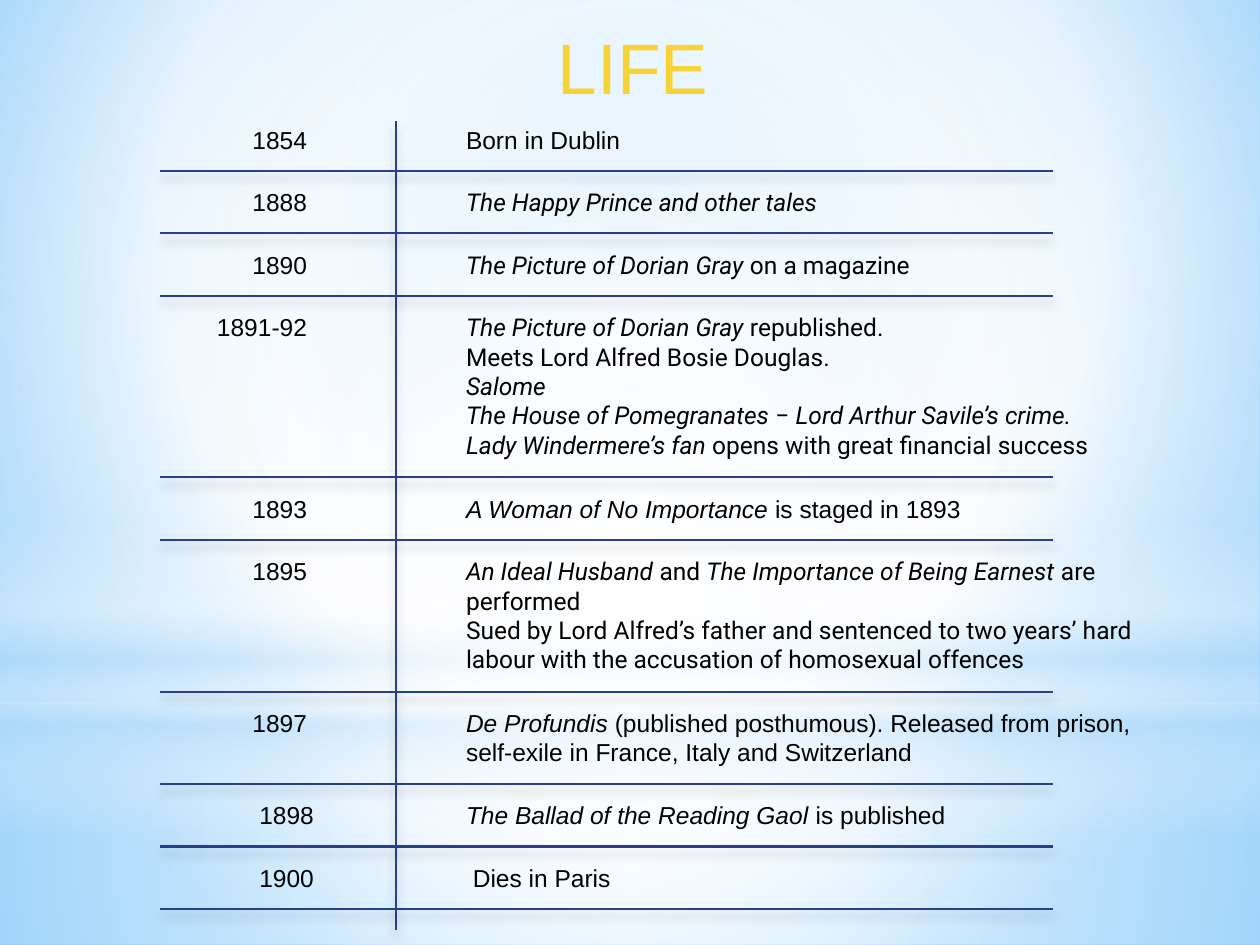
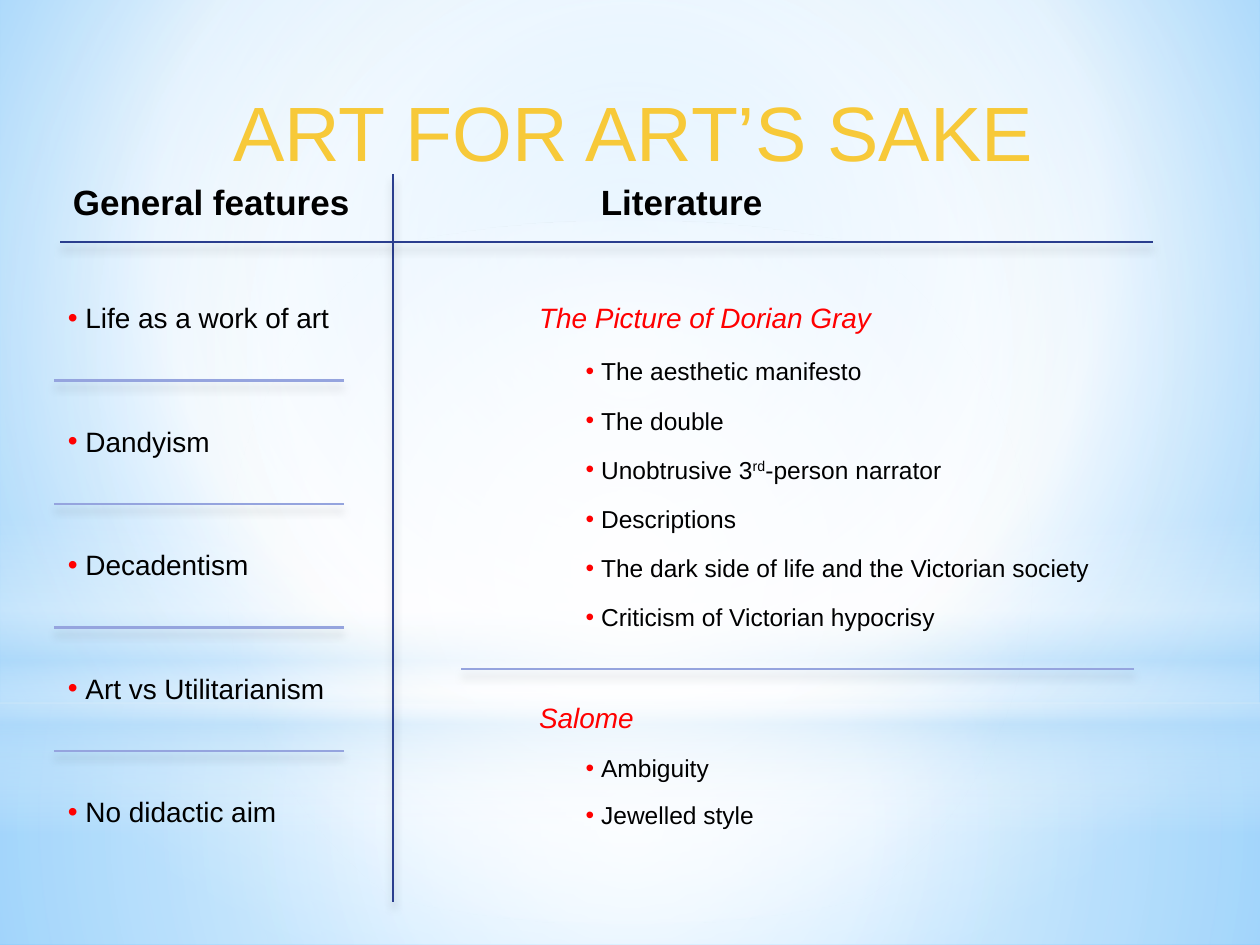
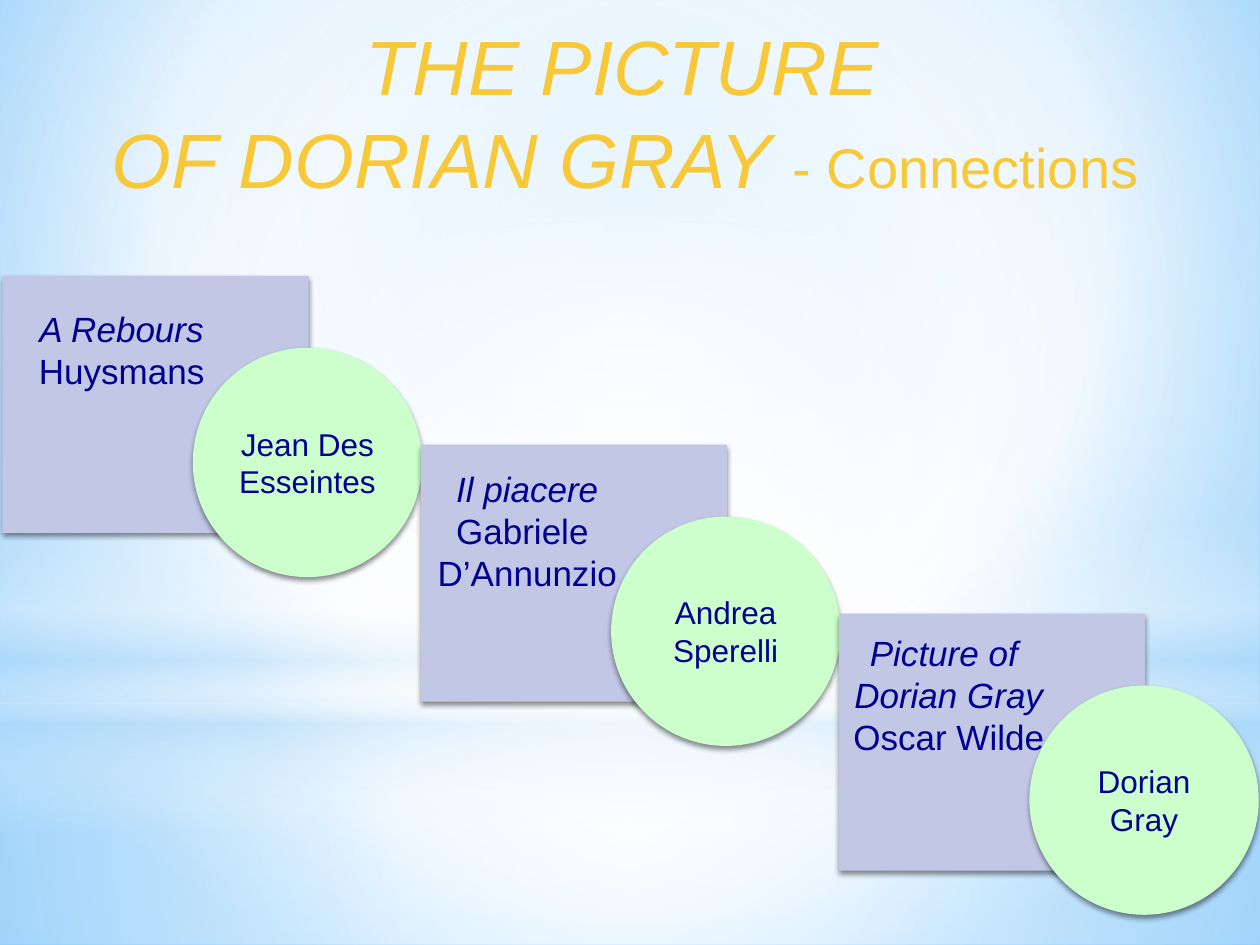
from lxml import etree
from pptx import Presentation
from pptx.dml.color import RGBColor
from pptx.enum.shapes import MSO_CONNECTOR, MSO_SHAPE
from pptx.enum.text import MSO_ANCHOR, PP_ALIGN
from pptx.oxml import parse_xml
from pptx.oxml.ns import nsdecls, qn
from pptx.util import Inches, Pt

# Shared look
GOLD = RGBColor(0xF7, 0xC9, 0x39)
LIFE_GOLD = RGBColor(0xF7, 0xD3, 0x36)
BLACK = RGBColor(0x00, 0x00, 0x00)
RED = RGBColor(0xFF, 0x00, 0x00)
NAVY = RGBColor(0x00, 0x00, 0x90)
RULE_BLUE = RGBColor(0x2A, 0x3E, 0x8E)
PALE_RULE = RGBColor(0x95, 0xA4, 0xDE)
CARD_FILL = RGBColor(0xC2, 0xC7, 0xE6)
CIRCLE_FILL = RGBColor(0xCC, 0xFF, 0xCC)
SANS, ROBOTO = "Arial", "Roboto"
WIDTH, HEIGHT = 10, 7.5
CENTRE = (50, 50, 50, 50)

# Gradient stops: position, colour, opacity (all percent)
SKY = [(0, "9ED5FF", 100), (60, "FFFFFF", 100), (100, "5BB9FF", 100)]
SKY_FOCUS = (20, 10, 20, 60)
HAZE = [  # preset, box, stops, focus (None means a vertical sweep)
    (MSO_SHAPE.RECTANGLE, (0, 5.58, WIDTH, 1.92),
     [(0, "FFFFFF", 91), (37, "FFFFFF", 76), (100, "B4DCFA", 79)], CENTRE),
    (MSO_SHAPE.RECTANGLE, (0, 0, WIDTH, 5.58),
     [(0, "FFFFFF", 89), (48, "FFFFFF", 62), (100, "B4DCFA", 79)], CENTRE),
    (MSO_SHAPE.RECTANGLE, (0, 4.12, WIDTH, 2.5),
     [(0, "FFFFFF", 0), (29, "FFFFFF", 30), (45, "B4DCFA", 40),
      (55, "FFFFFF", 26), (65, "B4DCFA", 60), (100, "FFFFFF", 0)], None),
    (MSO_SHAPE.OVAL, (0, 1.75, WIDTH, 5.58),
     [(0, "FFFFFF", 100), (56, "FFFFFF", 0)], CENTRE),
]

# Content: *...* is italic, ^...^ is superscript
LIFE = [  # year, font, lines taken, paragraphs
    ("1854 ", SANS, 1, ["Born in Dublin"]),
    ("1888 ", ROBOTO, 1, ["*The Happy Prince and other tales*"]),
    ("1890 ", ROBOTO, 1, ["*The Picture of Dorian Gray* on a magazine"]),
    ("1891-92 ", ROBOTO, 5, [
        "*The Picture of Dorian Gray* republished.",
        "Meets Lord Alfred Bosie Douglas.",
        "*Salome*",
        "*The House of Pomegranates* − *Lord Arthur Savile’s crime.*",
        "*Lady Windermere’s fan* opens with great financial success"]),
    ("1893 ", SANS, 1, ["*A Woman of No Importance *is staged in 1893"]),
    ("1895 ", ROBOTO, 4, [
        "*An Ideal Husband* and *The Importance of Being Earnest* are performed",
        "Sued by Lord Alfred’s father and sentenced to two years’ hard labour "
        "with the accusation of homosexual offences"]),
    ("1897 ", SANS, 2, [
        "*De Profundis* (published posthumous). Released from prison, "
        "self-exile in France, Italy and Switzerland"]),
    ("1898", SANS, 1, ["*The Ballad of the Reading Gaol* is published"]),
    ("1900", SANS, 1, [" Dies in Paris"]),
]
FEATURES = ["Life as a work of art", "Dandyism", "Decadentism",
            "Art vs Utilitarianism", "No didactic aim"]
WORKS = [  # title, its top, top of first point, pitch, points
    ("*The Picture of Dorian Gray*", 2.34, 2.78, 0.39, [
        "The aesthetic manifesto", "The double",
        "Unobtrusive 3^rd^-person narrator", "Descriptions",
        "The dark side of life and the Victorian society",
        "Criticism of Victorian hypocrisy"]),
    ("*Salome*", 5.51, 5.93, 0.37, ["Ambiguity", "Jewelled style"]),
]
CONNECTIONS = [  # book lines, text box inside the card, hero lines
    (["*A Rebours*", "Huysmans"], (0.15, 0.2, 1.59, 0.77),
     ["Jean Des", "Esseintes"]),
    (["*Il piacere*", "Gabriele ", "D’Annunzio"], (0.02, 0.13, 1.65, 1.11),
     ["Andrea", "Sperelli"]),
    (["*Picture of *", "*Dorian Gray*", "Oscar Wilde"], (-0.02, 0.09, 1.78, 1.11),
     ["Dorian", "Gray"]),
]


def inches(*lengths):
    return [Inches(length) for length in lengths]


# Fills and shadows
def set_gradient(element, stops, focus):
    """Replace the first solid fill in the element with a gradient."""
    gradient = parse_xml(f'<a:gradFill {nsdecls("a")} rotWithShape="1"><a:gsLst/></a:gradFill>')
    for position, colour, opacity in stops:
        stop = etree.SubElement(gradient[0], qn("a:gs"), pos=str(position * 1000))
        tint = etree.SubElement(stop, qn("a:srgbClr"), val=colour)
        if opacity < 100:
            etree.SubElement(tint, qn("a:alpha"), val=str(opacity * 1000))
    if focus:
        sweep = etree.SubElement(gradient, qn("a:path"), path="circle")
        sides = {side: str(share * 1000) for side, share in zip("ltrb", focus)}
        etree.SubElement(sweep, qn("a:fillToRect"), **sides)
    else:
        etree.SubElement(gradient, qn("a:lin"), ang="5400000", scaled="0")
    solid = element.find(".//" + qn("a:solidFill"))
    solid.getparent().replace(solid, gradient)


def add_shadow(shape, opacity, blur, distance):
    effects = parse_xml(
        f'<a:effectLst {nsdecls("a")}><a:outerShdw blurRad="{Pt(blur)}" '
        f'dist="{Pt(distance)}" dir="5400000" rotWithShape="0"><a:srgbClr val="000000">'
        f'<a:alpha val="{opacity * 1000}"/></a:srgbClr></a:outerShdw></a:effectLst>')
    shape.element.spPr.append(effects)


# Shapes and lines
def add_plain(page, preset, box, colour):
    shape = page.shapes.add_shape(preset, *inches(*box))
    shape.shadow.inherit = False
    shape.fill.solid()
    shape.fill.fore_color.rgb = colour
    shape.line.fill.background()
    return shape


def add_raised(page, preset, box, colour):
    shape = add_plain(page, preset, box, colour)
    spPr = shape.element.spPr
    spPr.remove(spPr.find(qn("a:effectLst")))
    add_shadow(shape, 45, 3.1, 1.8)
    return shape


def add_rule(page, start, end, colour=RULE_BLUE):
    rule = page.shapes.add_connector(MSO_CONNECTOR.STRAIGHT, *inches(*start, *end))
    rule.line.color.rgb = colour
    rule.line.width = Pt(1.25)
    add_shadow(rule, 20, 5, 4)


# Text
def add_span(para, text, size, colour, font=SANS, bold=False, italic=False, raised=False):
    span = para.add_run()
    span.text = text
    span.font.name = font
    span.font.size = Pt(size)
    span.font.color.rgb = colour
    span.font.bold = bold
    span.font.italic = italic
    if raised:
        span.font._element.set("baseline", "30000")


def add_bullet(para, size):
    properties = para._p.get_or_add_pPr()
    hang = Pt(size * 0.63)
    properties.set("marL", str(hang))
    properties.set("indent", str(-hang))
    colour = etree.SubElement(properties, qn("a:buClr"))
    etree.SubElement(colour, qn("a:srgbClr"), val=str(RED))
    etree.SubElement(properties, qn("a:buFont"), typeface=SANS)
    etree.SubElement(properties, qn("a:buChar"), char="•")


def fill_text(frame, paragraphs, size, colour, align=PP_ALIGN.LEFT, bullet=False, **style):
    for index, marked in enumerate(paragraphs):
        para = frame.add_paragraph() if index else frame.paragraphs[0]
        para.alignment = align
        if bullet:
            add_bullet(para, size)
        for i, part in enumerate(marked.split("*")):
            for j, piece in enumerate(part.split("^")):
                if piece:
                    add_span(para, piece, size, colour, italic=i % 2 == 1,
                             raised=j % 2 == 1, **style)


def add_text(page, box, paragraphs, size, colour, wrap=True, **style):
    frame = page.shapes.add_textbox(*inches(*box)).text_frame
    frame.word_wrap = wrap
    fill_text(frame, paragraphs, size, colour, **style)


def add_title(page, box, lines, colour=GOLD):
    """Each line is a list of (text, size, italic)."""
    frame = page.shapes.add_textbox(*inches(*box)).text_frame
    frame.word_wrap = True
    frame.margin_left, frame.margin_top, frame.margin_right, frame.margin_bottom = inches(
        0.05, 0.11, 0, 0)
    para = frame.paragraphs[0]
    para.alignment = PP_ALIGN.CENTER
    for index, line in enumerate(lines):
        if index:
            para.add_line_break()
        for text, size, italic in line:
            add_span(para, text, size, colour, italic=italic)


def add_page(deck):
    page = deck.slides.add_slide(deck.slide_layouts[6])
    page.background.fill.solid()
    set_gradient(page.element, SKY, SKY_FOCUS)
    for preset, box, stops, focus in HAZE:
        set_gradient(add_plain(page, preset, box, CARD_FILL).element, stops, focus)
    return page


# Slides
def build_life(deck):
    page = add_page(deck)
    add_title(page, (3.85, 0.07, 2.3, 0.69), [[("LIFE", 40.8, False)]], LIFE_GOLD)
    line_height, row_padding, rule_gap = Pt(17).inches, 0.26, 0.08
    top = 0.94
    rules = []
    for year, font, lines, paragraphs in LIFE:
        height = line_height * lines + 0.1
        add_text(page, (1.48, top, 1.11, 0.34), [year], 14, BLACK, align=PP_ALIGN.RIGHT)
        add_text(page, (3.6, top, 5.75, height), paragraphs, 14, BLACK, font=font)
        top += line_height * lines + row_padding
        rules.append(top - rule_gap)
    add_rule(page, (3.14, 0.96), (3.14, 7.38))
    for y in rules:
        add_rule(page, (1.27, y), (8.36, y))


def build_art(deck):
    page = add_page(deck)
    add_title(page, (1.69, 0.56, 6.63, 0.82), [[("ART FOR ART’S SAKE", 44, False)]])
    for heading, left, width in [("General features", 0.48, 2.45), ("Literature", 4.67, 1.6)]:
        add_text(page, (left, 1.38, width, 0.44), [heading], 20, BLACK, bold=True)
    add_rule(page, (3.12, 1.38), (3.12, 7.16))
    add_rule(page, (0.48, 1.92), (9.15, 1.92))

    # Features, with a rule between neighbours
    for index, feature in enumerate(FEATURES):
        top = 2.34 + 0.98 * index
        add_text(page, (0.44, top, 2.4, 0.37), [feature], 16, BLACK, bullet=True)
        if index < len(FEATURES) - 1:
            add_rule(page, (0.43, top + 0.68), (2.73, top + 0.68), PALE_RULE)

    # Works and their points
    for title, title_top, first_top, pitch, points in WORKS:
        add_text(page, (4.18, title_top, 2.92, 0.37), [title], 16, RED)
        for index, point in enumerate(points):
            box = (4.55, first_top + pitch * index, 4.34, 0.34)
            add_text(page, box, [point], 14, BLACK, bullet=True)
    add_rule(page, (3.66, 5.31), (9, 5.31), PALE_RULE)


def build_connections(deck):
    page = add_page(deck)
    add_title(page, (0.47, 0.04, 9.06, 1.56), [
        [("THE PICTURE ", 44, True)],
        [("OF DORIAN GRAY ", 44, True), ("- Connections ", 32, False)]])
    for index, (book, (dx, dy, width, height), hero) in enumerate(CONNECTIONS):
        left, top = 0.02 + 3.32 * index, 2.19 + 1.34 * index
        add_raised(page, MSO_SHAPE.RECTANGLE, (left, top, 2.43, 2.04), CARD_FILL)
        circle = add_raised(page, MSO_SHAPE.OVAL, (left + 1.51, top + 0.57, 1.82, 1.82),
                            CIRCLE_FILL)
        circle.text_frame.vertical_anchor = MSO_ANCHOR.MIDDLE
        circle.text_frame.word_wrap = False
        fill_text(circle.text_frame, hero, 18, NAVY, align=PP_ALIGN.CENTER)
        add_text(page, (left + dx, top + dy, width, height), book, 20, NAVY,
                 wrap=False, align=PP_ALIGN.CENTER)


def main():
    deck = Presentation()
    deck.slide_width, deck.slide_height = inches(WIDTH, HEIGHT)
    build_life(deck)
    build_art(deck)
    build_connections(deck)
    deck.save("out.pptx")


if __name__ == "__main__":
    main()
